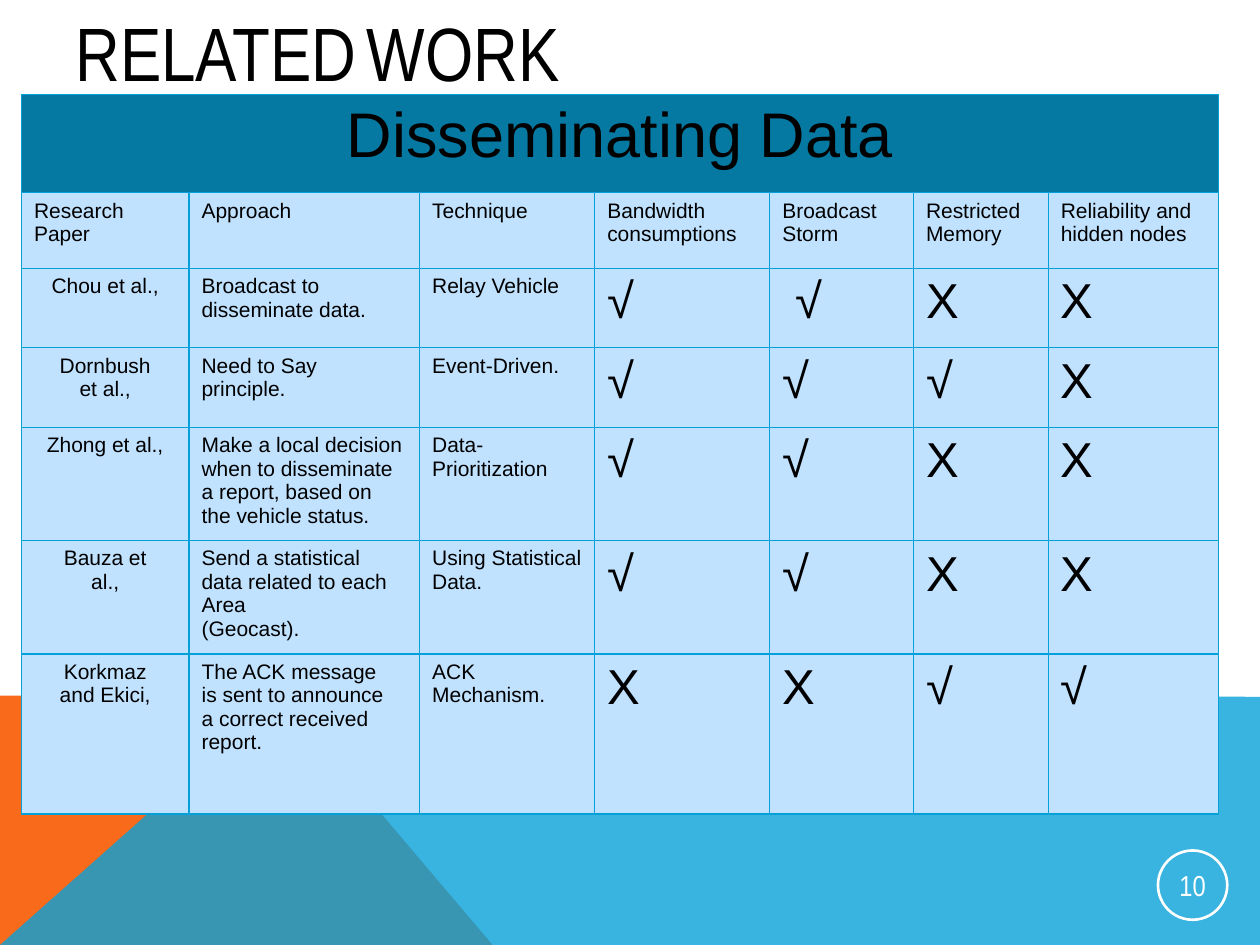
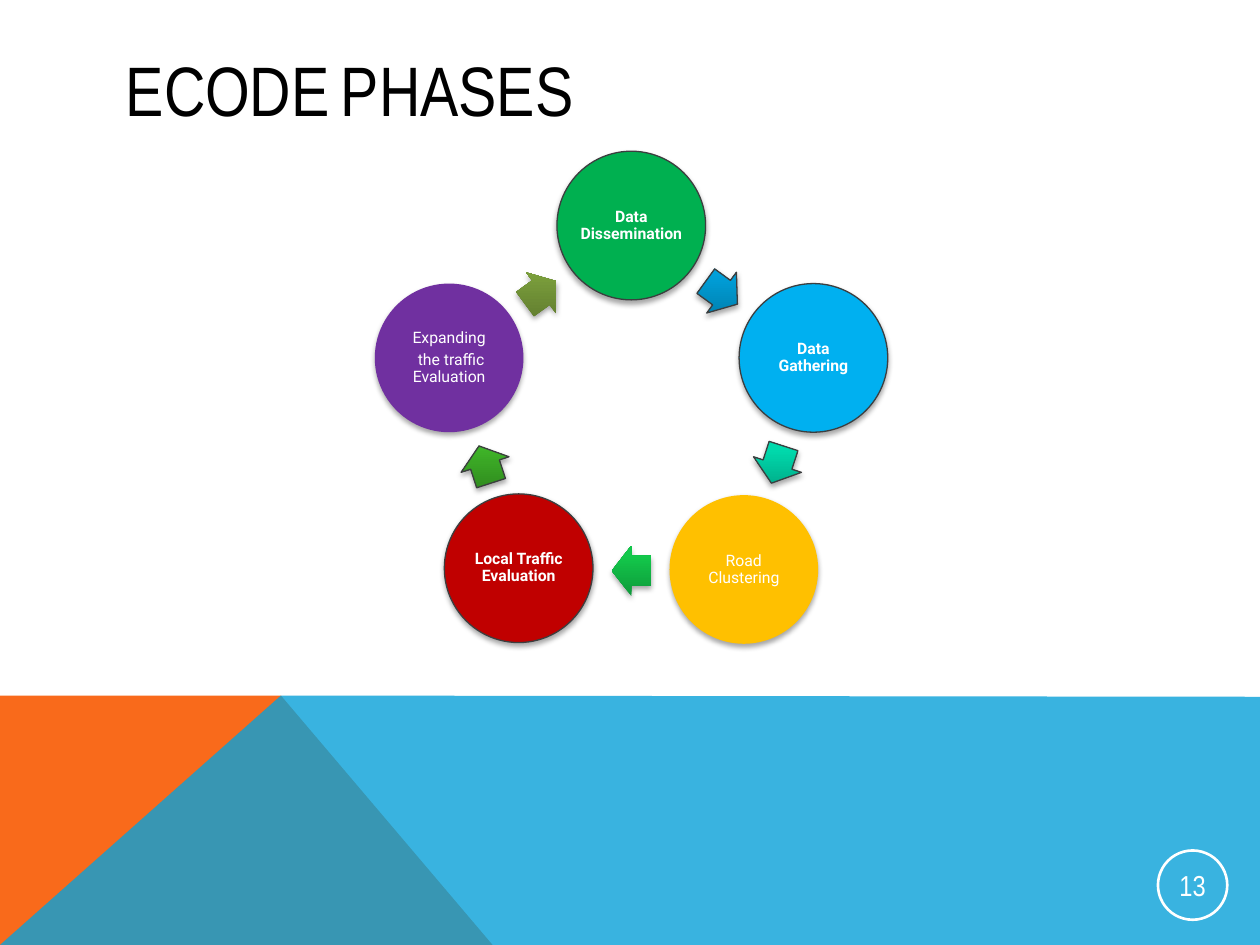
import dataclasses
import math

import lxml.etree
import pptx
import pptx.dml.color
import pptx.enum.shapes
import pptx.enum.text
import pptx.oxml.ns
import pptx.util

Inches = pptx.util.Inches
Pt = pptx.util.Pt
SHAPE = pptx.enum.shapes.MSO_SHAPE
ALIGN = pptx.enum.text.PP_ALIGN
ANCHOR = pptx.enum.text.MSO_ANCHOR
qn = pptx.oxml.ns.qn

BLACK, WHITE = "000000", "FFFFFF"
ORANGE, BLUE = "F96A1B", "08A1D9"
HEAD, CELL, GRID, EDGE = "0679A3", "C0E2FF", "03A0D9", "3C3E3F"
NARROW, SANS, ROUND = "Arial Narrow", "Arial", "Roboto"


@dataclasses.dataclass
class Font:
    name: str
    size: float
    color: str = BLACK
    bold: bool = False


@dataclasses.dataclass
class Box:
    left: float
    top: float
    width: float
    height: float

    def lengths(self) -> list:
        return [Inches(v) for v in dataclasses.astuple(self)]


@dataclasses.dataclass
class Phase:
    lines: list[str]
    fill: str
    bold: bool
    edge: bool
    dark: str
    light: str
    arrow_edge: bool
    lift: float = 0


@dataclasses.dataclass
class Study:
    paper: str
    approach: str
    method: str
    marks: list[str]


PHASES = [
    Phase(["Data Dissemination"], "00B050", True, True, "007BA8", "00A0DA", True),
    Phase(["Data Gathering"], "00B0F0", True, True, "00A885", "00DAAD", True),
    Phase(["Road Clustering"], "FFC000", False, False, "0E9A3A", "13C84B", False, 0.02),
    Phase(["Local Traffic Evaluation"], "C00000", True, True,
          "308A1E", "3EB328", True, 0.03),
    Phase(["Expanding", " the traffic Evaluation"], "7030A0", False, False,
          "5F7A2E", "7B9F3C", False),
]

LABELS = ["Research Paper", "Approach", "Technique", "Bandwidth consumptions",
          "Broadcast Storm", "Restricted Memory", "Reliability and hidden nodes"]
STUDIES = [
    Study("Chou et al.,", "Broadcast to disseminate data.", "Relay Vehicle",
          ["√", " √", "X", "X"]),
    Study("Dornbush\net al.,", "Need to Say principle.", "Event-Driven.",
          ["√", "√", "√", "X"]),
    Study("Zhong et al.,", "Make a local decision when to disseminate a report, "
          "based on the vehicle status.", "Data-\nPrioritization",
          ["√", "√", "X", "X"]),
    Study("Bauza et\nal.,", "Send a statistical data related to each Area\n(Geocast).",
          "Using Statistical\nData.", ["√", "√", "X", "X"]),
    Study("Korkmaz\nand Ekici,", "The ACK message\nis sent to announce\n"
          "a correct received\nreport.", "ACK Mechanism.", ["X", "X", "√", "√"]),
]
COLS = [1.33, 1.83, 1.39, 1.39, 1.14, 1.07, 1.35]
ROWS = [0.78, 0.6, 0.63, 0.63, 0.87, 0.8, 1.27]


def rgb(code: str) -> pptx.dml.color.RGBColor:
    return pptx.dml.color.RGBColor.from_string(code)


def paint(item, color: str) -> None:
    item.fill.solid()
    item.fill.fore_color.rgb = rgb(color)


def add_run(para, text: str, font: Font) -> None:
    run = para.add_run()
    run.text = text
    run.font.name = font.name
    run.font.size = Pt(font.size)
    run.font.bold = font.bold
    run.font.color.rgb = rgb(font.color)


def write(frame, lines: list[str], font: Font, align=ALIGN.LEFT) -> None:
    for i, line in enumerate(lines):
        para = frame.add_paragraph() if i else frame.paragraphs[0]
        para.alignment = align
        add_run(para, line, font)


def center(frame) -> None:
    """Anchor the text in the middle, with hair-thin insets."""
    frame.word_wrap = True
    frame.vertical_anchor = ANCHOR.MIDDLE
    frame.margin_left = frame.margin_right = Inches(0.01)
    frame.margin_top = frame.margin_bottom = Inches(0.01)


def outline(shape, color: str | None, width: float = 0.75) -> None:
    if color:
        shape.line.color.rgb = rgb(color)
        shape.line.width = Pt(width)
    else:
        shape.line.fill.background()


def add_shade(shape) -> None:
    """Give the shape a soft shadow straight below it."""
    shape.shadow.inherit = False
    effects = shape._element.spPr.find(qn("a:effectLst"))
    outer = lxml.etree.SubElement(
        effects, qn("a:outerShdw"), blurRad=str(Pt(3.1)), dist=str(Pt(1.8)),
        dir="5400000", algn="ctr", rotWithShape="0")
    tint = lxml.etree.SubElement(outer, qn("a:srgbClr"), val=BLACK)
    lxml.etree.SubElement(tint, qn("a:alpha"), val="35000")


def add_band(slide, points: list[tuple[float, float]], color: str, alpha: int = 100) -> None:
    spots = [(Inches(x), Inches(y)) for x, y in points]
    pen = slide.shapes.build_freeform(*spots[0])
    pen.add_line_segments(spots[1:], close=True)
    band = pen.convert_to_shape()
    band.shadow.inherit = False
    paint(band, color)
    outline(band, None)
    if alpha < 100:
        tint = band._element.spPr.find(qn("a:solidFill"))[0]
        lxml.etree.SubElement(tint, qn("a:alpha"), val=str(alpha * 1000))


def add_base(deck, number: str):
    """Add a slide with the bottom bands and the page number."""
    slide = deck.slides.add_slide(deck.slide_layouts[6])
    add_band(slide, [(0, 7.5), (0, 5.52), (2.23, 5.52), (3.91, 7.5)], ORANGE)
    add_band(slide, [(0, 7.5), (2.23, 5.52), (10, 5.53), (10, 7.5)], BLUE, 80)
    ring = slide.shapes.add_shape(SHAPE.OVAL, *Box(9.19, 6.75, 0.55, 0.55).lengths())
    ring.shadow.inherit = False
    ring.fill.background()
    outline(ring, WHITE, 1.5)
    center(ring.text_frame)
    write(ring.text_frame, [number], Font(NARROW, 16.5, WHITE), ALIGN.CENTER)
    return slide


def add_title(slide, box: Box, words: list[str], size: float, gap: float, anchor) -> None:
    """Write two words with a smaller space between them."""
    frame = slide.shapes.add_textbox(*box.lengths()).text_frame
    frame.word_wrap = True
    frame.vertical_anchor = anchor
    para = frame.paragraphs[0]
    for text, points in ((words[0], size), (" ", gap), (words[1], size)):
        add_run(para, text, Font(NARROW, points))


def add_grid(cell) -> None:
    props = cell._tc.get_or_add_tcPr()
    for i, side in enumerate(("lnL", "lnR", "lnT", "lnB")):
        line = lxml.etree.Element(qn(f"a:{side}"), w=str(Pt(0.75)))
        fill = lxml.etree.SubElement(line, qn("a:solidFill"))
        lxml.etree.SubElement(fill, qn("a:srgbClr"), val=GRID)
        props.insert(i, line)


def add_studies(slide) -> None:
    box = Box(0.17, 0.75, sum(COLS), sum(ROWS))
    table = slide.shapes.add_table(len(ROWS), len(COLS), *box.lengths()).table
    table.first_row = table.horz_banding = False
    for col, width in zip(table.columns, COLS):
        col.width = Inches(width)
    for row, height in zip(table.rows, ROWS):
        row.height = Inches(height)
    for cell in table.iter_cells():
        paint(cell, CELL)
        add_grid(cell)

    head = table.cell(0, 0)
    head.merge(table.cell(0, len(COLS) - 1))
    paint(head, HEAD)
    write(head.text_frame, ["Disseminating Data"], Font(SANS, 36), ALIGN.CENTER)
    small, large = Font(SANS, 12), Font(SANS, 28)
    for c, label in enumerate(LABELS):
        write(table.cell(1, c).text_frame, [label], small)
    for r, study in enumerate(STUDIES, 2):
        texts = [study.paper, study.approach, study.method, *study.marks]
        for c, text in enumerate(texts):
            write(table.cell(r, c).text_frame, text.split("\n"),
                  large if c > 2 else small, ALIGN.LEFT if c else ALIGN.CENTER)


def around(angle: float, radius: float, width: float, height: float) -> Box:
    """Box centred on the ring, the angle running clockwise from the top."""
    turn = math.radians(angle)
    x, y = 5.01 + radius * math.sin(turn), 3.31 - radius * math.cos(turn)
    return Box(x - width / 2, y - height / 2, width, height)


def add_phase(slide, phase: Phase, angle: float) -> None:
    box = around(angle, 1.52, 1.18, 1.18)
    box.top -= phase.lift
    disk = slide.shapes.add_shape(SHAPE.OVAL, *box.lengths())
    paint(disk, phase.fill)
    outline(disk, EDGE if phase.edge else None)
    add_shade(disk)

    inner = Box(box.left + 0.17, box.top + 0.17, 0.84, 0.84)
    frame = slide.shapes.add_textbox(*inner.lengths()).text_frame
    center(frame)
    write(frame, phase.lines, Font(ROUND, 9, WHITE, phase.bold), ALIGN.CENTER)
    for para in frame.paragraphs:
        para.line_spacing = 0.9
        para.space_after = Pt(3.15)


def add_arrow(slide, phase: Phase, angle: float) -> None:
    box = around(angle, 1.22, 0.31, 0.4)
    arrow = slide.shapes.add_shape(SHAPE.RIGHT_ARROW, *box.lengths())
    arrow.rotation = angle
    arrow.adjustments[0], arrow.adjustments[1] = 0.6, 0.5
    arrow.fill.gradient()
    arrow.fill.gradient_angle = 90
    low, high = arrow.fill.gradient_stops
    low.color.rgb, high.color.rgb = rgb(phase.dark), rgb(phase.light)
    low.position, high.position = 0, 0.8
    arrow._element.spPr.find(qn("a:gradFill")).set("rotWithShape", "0")
    outline(arrow, EDGE if phase.arrow_edge else None)
    add_shade(arrow)


def main() -> None:
    deck = pptx.Presentation()
    deck.slide_width, deck.slide_height = Inches(10), Inches(7.5)

    work = add_base(deck, "10")
    add_title(work, Box(0.5, 0, 9, 1.17), ["RELATED", "WORK"], 43.2, 25.2, ANCHOR.TOP)
    add_studies(work)

    cycle = add_base(deck, "13")
    add_title(cycle, Box(0.9, 0.4, 8.22, 0.6), ["ECODE", "PHASES"], 40, 28, ANCHOR.MIDDLE)
    step = 360 / len(PHASES)
    for i, phase in enumerate(PHASES):
        add_phase(cycle, phase, i * step)
        add_arrow(cycle, phase, (i + 0.5) * step)

    deck.save("out.pptx")


if __name__ == "__main__":
    main()
